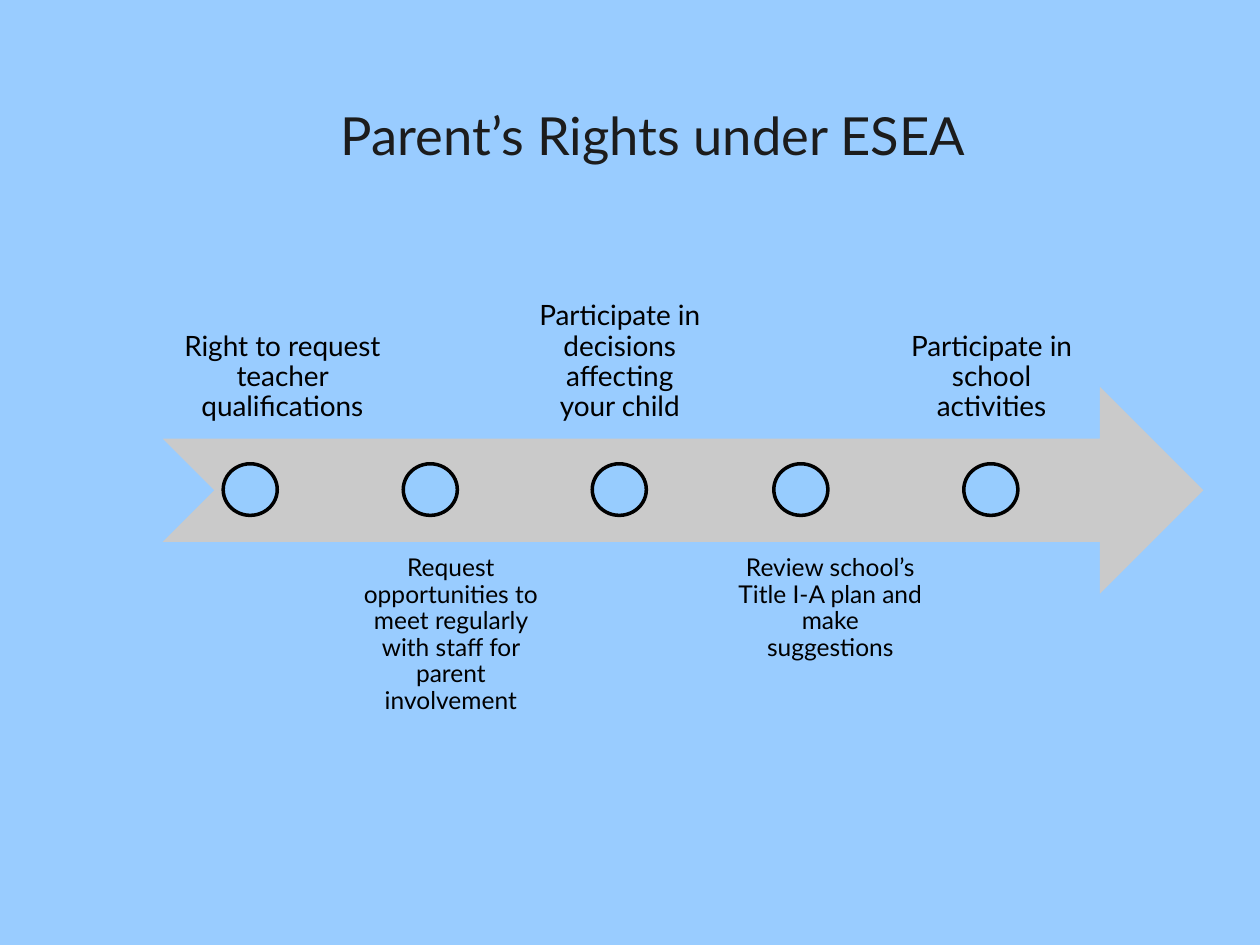
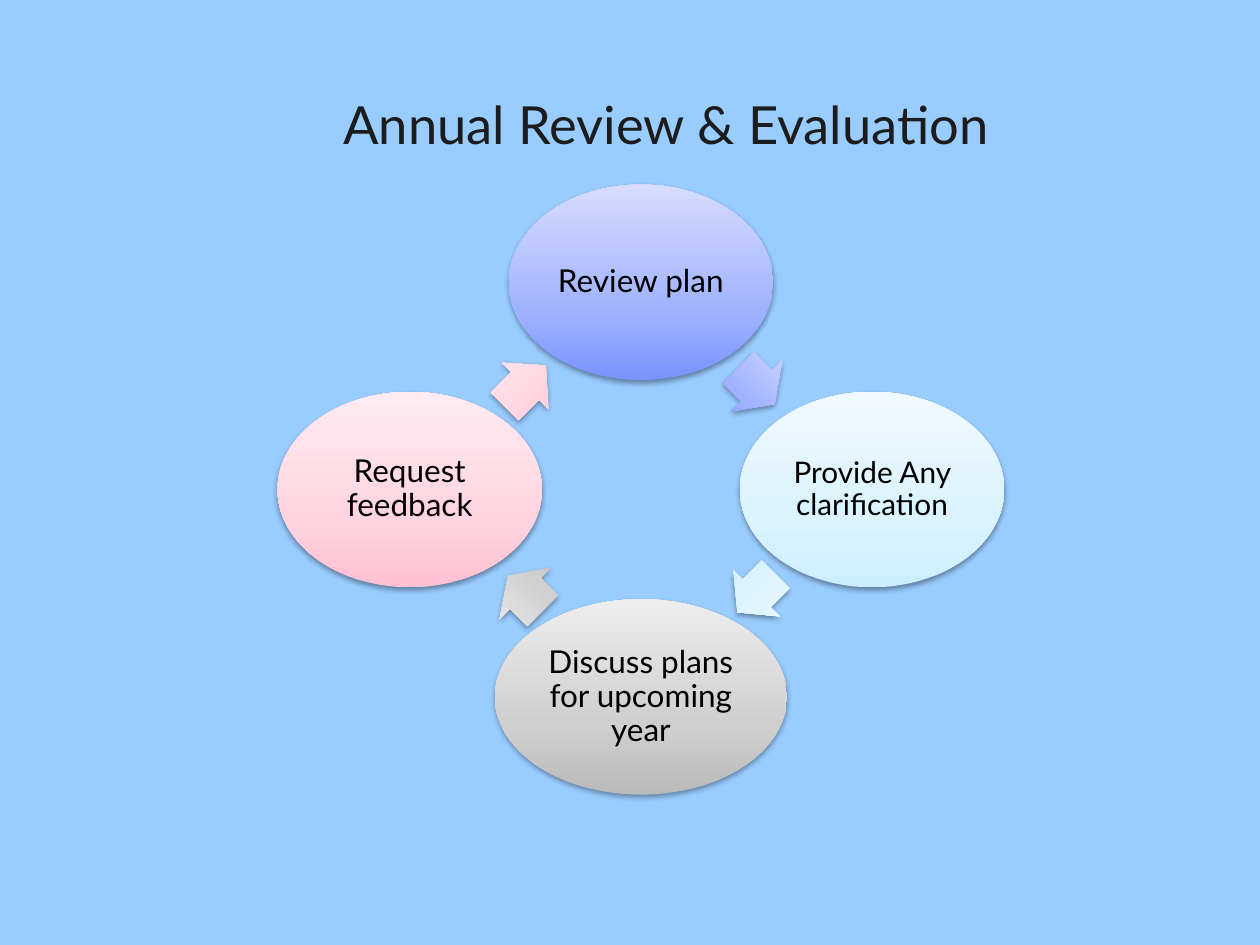
"""Build two slides on parents' rights and the annual review cycle."""
from pptx import Presentation
from pptx.dml.color import RGBColor
from pptx.enum.shapes import MSO_SHAPE
from pptx.enum.text import MSO_ANCHOR, PP_ALIGN
from pptx.oxml import parse_xml
from pptx.oxml.ns import nsdecls
from pptx.util import Cm, Pt

COLORS = {
    "background": "99CCFF",
    "title": "1C1C1C",
    "text": "000000",
    "timeline": "CACACA",
    "marker": "97CCFE",
}
GRADIENTS = {
    "violet": ("7A93FF", "A0B2FF", "D6DDFF"),
    "sky": ("CDEEFF", "DAF3FF", "EFF9FF"),
    "grey": ("BABABA", "CFCFCF", "EDEDED"),
    "pink": ("FFC0D3", "FFD4E0", "FFEBF2"),
}
FONT = "Lato"


def write_text(shape, text, size, color, anchor, inset, spacing):
    """Write one centred run into a shape."""
    frame = shape.text_frame
    frame.word_wrap = True
    frame.vertical_anchor = anchor
    frame.margin_left = frame.margin_right = Cm(inset[0])
    frame.margin_top = frame.margin_bottom = Cm(inset[1])
    paragraph = frame.paragraphs[0]
    paragraph.alignment = PP_ALIGN.CENTER
    paragraph.line_spacing = spacing
    run = paragraph.add_run()
    run.text = text
    run.font.name = FONT
    run.font.size = Pt(size)
    run.font.color.rgb = RGBColor.from_string(COLORS[color])


def style_gradient(shape, gradient):
    """Give a shape an upward gradient, no outline and a soft shadow."""
    shape.line.fill.background()
    shape.shadow.inherit = False
    stops = "".join(
        f'<a:gs pos="{position}"><a:srgbClr val="{color}"/></a:gs>'
        for position, color in zip((0, 35000, 100000), GRADIENTS[gradient])
    )
    properties = shape.element.spPr
    properties.insert(2, parse_xml(
        f'<a:gradFill {nsdecls("a")} rotWithShape="1"><a:gsLst>{stops}</a:gsLst>'
        '<a:lin ang="16200000" scaled="0"/></a:gradFill>'
    ))
    properties[-1].append(parse_xml(
        f'<a:outerShdw {nsdecls("a")} blurRad="40000" dist="20000" dir="5400000" '
        'rotWithShape="0"><a:srgbClr val="000000"><a:alpha val="37000"/>'
        '</a:srgbClr></a:outerShdw>'
    ))


presentation = Presentation()
presentation.slide_width = Cm(25.4)
presentation.slide_height = Cm(19.05)
background = presentation.slide_master.background.fill
background.solid()
background.fore_color.rgb = RGBColor.from_string(COLORS["background"])

titles = [
    ("Parent’s Rights under ESEA", 4.67, 1.55, 2.34),
    ("Annual Review & Evaluation", 4.93, 1.47, 2.06),
]
slides = []
for text, left, top, height in titles:
    slide = presentation.slides.add_slide(presentation.slide_layouts[5])
    title = slide.shapes.title
    title.left, title.top = Cm(left), Cm(top)
    title.width, title.height = Cm(17), Cm(height)
    write_text(title, text, 30, "title", MSO_ANCHOR.MIDDLE, (0.25, 0.13), 1.0)
    slides.append(slide)
rights_slide, review_slide = slides

timeline = rights_slide.shapes.add_shape(
    MSO_SHAPE.NOTCHED_RIGHT_ARROW, Cm(3.28), Cm(7.8), Cm(20.98), Cm(4.17))
timeline.shadow.inherit = False
timeline.fill.solid()
timeline.fill.fore_color.rgb = RGBColor.from_string(COLORS["timeline"])
timeline.line.fill.background()

rights = [
    ("Right to request teacher qualifications", 3.28, 4.83, 4.5),
    ("Request opportunities to meet regularly with staff for parent involvement",
     6.93, 4.32, 8.13),
    ("Participate in decisions affecting your child", 10.54, 3.91, 11.94),
    ("Review school’s Title I-A plan and make suggestions", 14.58, 4.32, 15.6),
    ("Participate in school activities", 17.83, 4.32, 19.43),
]
for index, (text, label_left, label_width, marker_left) in enumerate(rights):
    if index % 2 == 0:
        label_top, size, anchor, inset = 4.65, 16, MSO_ANCHOR.BOTTOM, 0.3
    else:
        label_top, size, anchor, inset = 10.92, 14, MSO_ANCHOR.TOP, 0.28
    label = rights_slide.shapes.add_textbox(
        Cm(label_left), Cm(label_top), Cm(label_width), Cm(4.17))
    write_text(label, text, size, "text", anchor, (inset, inset), 0.9)
    marker = rights_slide.shapes.add_shape(
        MSO_SHAPE.OVAL, Cm(marker_left), Cm(9.35), Cm(1.09), Cm(1.04))
    marker.shadow.inherit = False
    marker.fill.solid()
    marker.fill.fore_color.rgb = RGBColor.from_string(COLORS["marker"])
    marker.line.color.rgb = RGBColor.from_string(COLORS["text"])
    marker.line.width = Pt(2)

center_x, center_y = 12.92, 9.87
radius_x, radius_y = 4.66, 4.18
step_height = 3.94
directions = [(0, -1), (1, 0), (0, 1), (-1, 0)]
steps = [
    ("Review plan", 18, "violet", 5.33, 1.04, 1.47),
    ("Provide Any clarification", 17, "sky", 5.33, 1.09, 1.32),
    ("Discuss plans for upcoming year", 18, "grey", 5.89, 0.99, 1.47),
    ("Request feedback", 18, "pink", 5.33, 1.17, 1.32),
]
for index, (text, size, gradient, width, arrow_width, arrow_height) in enumerate(steps):
    across, down = directions[index]
    next_across, next_down = directions[(index + 1) % len(directions)]
    step = review_slide.shapes.add_shape(
        MSO_SHAPE.OVAL,
        Cm(center_x + across * radius_x - width / 2),
        Cm(center_y + down * radius_y - step_height / 2),
        Cm(width), Cm(step_height))
    style_gradient(step, gradient)
    write_text(step, text, size, "text", MSO_ANCHOR.MIDDLE, (0.05, 0.05), 0.9)
    arrow = review_slide.shapes.add_shape(
        MSO_SHAPE.RIGHT_ARROW,
        Cm(center_x + (across + next_across) * radius_x / 2 - arrow_width / 2),
        Cm(center_y + (down + next_down) * radius_y / 2 - arrow_height / 2),
        Cm(arrow_width), Cm(arrow_height))
    arrow.adjustments[0] = 0.6
    arrow.rotation = 45 + 90 * index
    style_gradient(arrow, gradient)

presentation.save("out.pptx")
